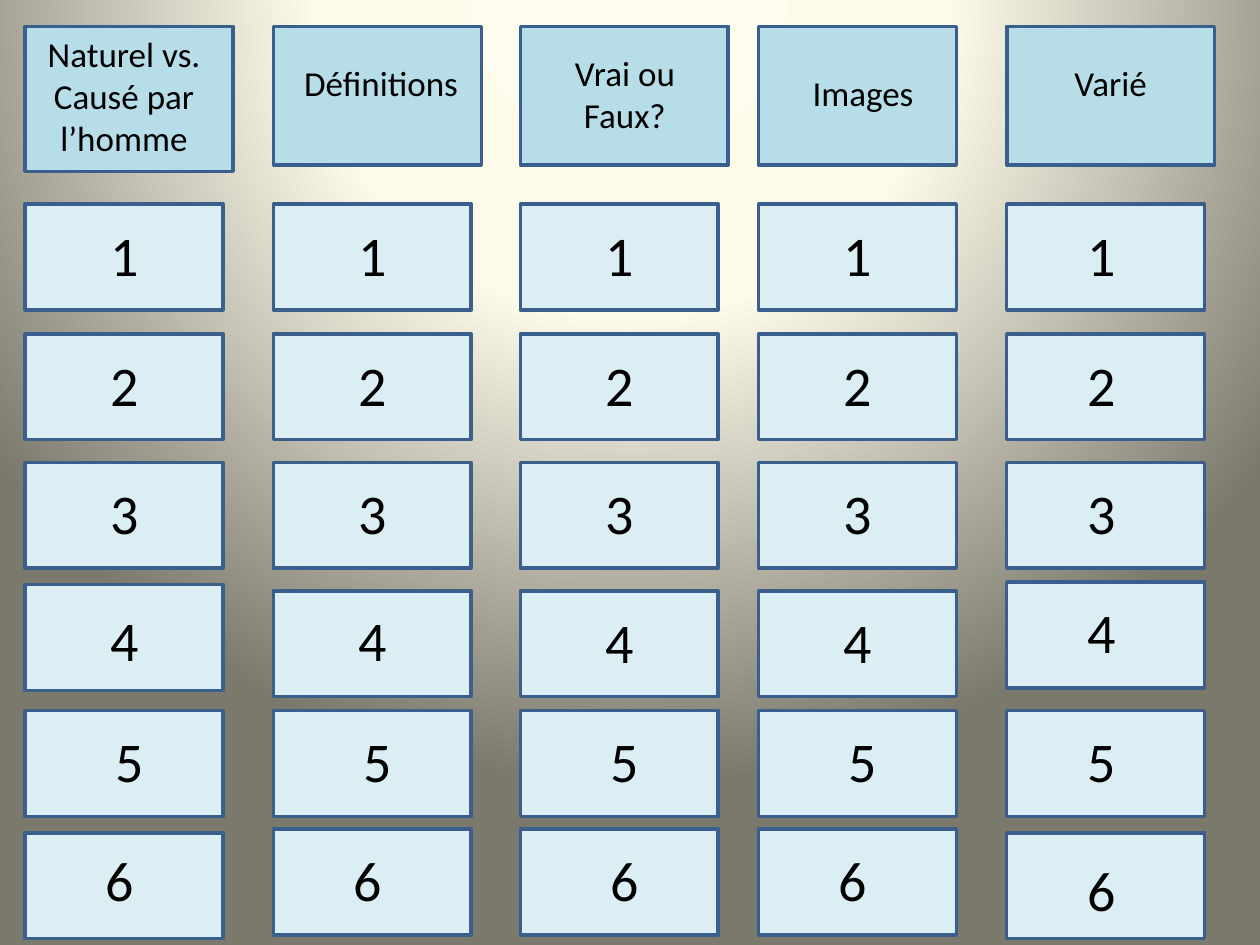
from pptx import Presentation
from pptx.dml.color import RGBColor
from pptx.enum.shapes import MSO_SHAPE
from pptx.enum.text import MSO_AUTO_SIZE, PP_ALIGN
from pptx.oxml import parse_xml
from pptx.oxml.ns import nsdecls
from pptx.util import Inches, Pt

RECTANGLE = MSO_SHAPE.RECTANGLE
CENTER = PP_ALIGN.CENTER
GROW = MSO_AUTO_SIZE.SHAPE_TO_FIT_TEXT

COLORS = {
    "header": "B7DEE8", "cell": "DBEEF4", "border": "3A5F8C", "text": "000000",
    "glow": "FEFCEE", "cream": "FDFAEA", "olive": "7B796B",
}

deck = Presentation()
deck.slide_width, deck.slide_height = Inches(10), Inches(7.5)
page = deck.slides.add_slide(deck.slide_layouts[6])


def add_card(left, top, width, height, fill):
    card = page.shapes.add_shape(
        RECTANGLE, Inches(left), Inches(top), Inches(width), Inches(height))
    card.shadow.inherit = False
    card.fill.solid()
    card.fill.fore_color.rgb = RGBColor.from_string(COLORS[fill])
    card.line.color.rgb = RGBColor.from_string(COLORS["border"])
    card.line.width = Pt(2)


def add_label(text, *, left, top, width, height, size):
    box = page.shapes.add_textbox(
        Inches(left), Inches(top), Inches(width), Inches(height))
    box.text_frame.word_wrap = True
    box.text_frame.auto_size = GROW
    para = box.text_frame.paragraphs[0]
    para.alignment = CENTER
    span = para.add_run()
    span.text = text
    span.font.name = "Calibri"
    span.font.size = Pt(size)
    span.font.color.rgb = RGBColor.from_string(COLORS["text"])


# Background: round glow centred above the page
page.background.fill.solid()
solid = page.background._cSld.xpath("p:bg/p:bgPr/a:solidFill")[0]
stops = "".join(
    f'<a:gs pos="{position * 1000}"><a:srgbClr val="{COLORS[name]}"/></a:gs>'
    for position, name in [(0, "glow"), (40, "cream"), (100, "olive")])
solid.getparent().replace(solid, parse_xml(
    f'<a:gradFill {nsdecls("a")} rotWithShape="1"><a:gsLst>{stops}</a:gsLst>'
    '<a:path path="circle"><a:fillToRect l="50000" t="-80000" r="50000" b="180000"/>'
    '</a:path></a:gradFill>'))

# Category headers: card left, width, height, then label text and place
headers = [
    (0.2, 1.65, 1.15, "Naturel vs. Causé par l’homme", 0.12, 0.21, 1.73, 1.11),
    (2.17, 1.65, 1.1, "Définitions", 2.24, 0.44, 1.57, 0.44),
    (4.13, 1.65, 1.1, "Vrai ou Faux?", 4.21, 0.36, 1.5, 0.77),
    (6.02, 1.57, 1.1, "Images", 6.1, 0.52, 1.5, 0.44),
    (7.99, 1.65, 1.1, "Varié", 7.99, 0.44, 1.65, 0.44),
]
for left, width, height, title, text_left, text_top, text_width, text_height in headers:
    add_card(left, 0.21, width, height, "header")
    add_label(title, left=text_left, top=text_top, width=text_width,
              height=text_height, size=20)

# Question grid: tops per row, with the few cells that sit off their row
card_tops = [1.62, 2.65, 3.67, 4.69, 5.64, 6.58]
text_tops = [1.7, 2.73, 3.75, 4.77, 5.72, 6.66]
moved_cards = {(0, 4): 4.64, (4, 4): 4.62, (0, 6): 6.61, (4, 6): 6.61}
moved_texts = {(0, 4): 4.76, (1, 4): 4.76, (4, 4): 4.69, (4, 6): 6.74}
shifted_texts = {(0, 5), (1, 5), (2, 5), (3, 5), (2, 6)}

for column, header in enumerate(headers):
    left = header[0]
    for number, (card_top, text_top) in enumerate(zip(card_tops, text_tops), 1):
        cell = (column, number)
        add_card(left, moved_cards.get(cell, card_top), 1.57, 0.84, "cell")
        add_label(str(number),
                  left=left + (0.16 if cell in shifted_texts else 0.08),
                  top=moved_texts.get(cell, text_top),
                  width=1.34 if column == 4 or number > 4 else 1.42,
                  height=0.64, size=32)

deck.save("out.pptx")
